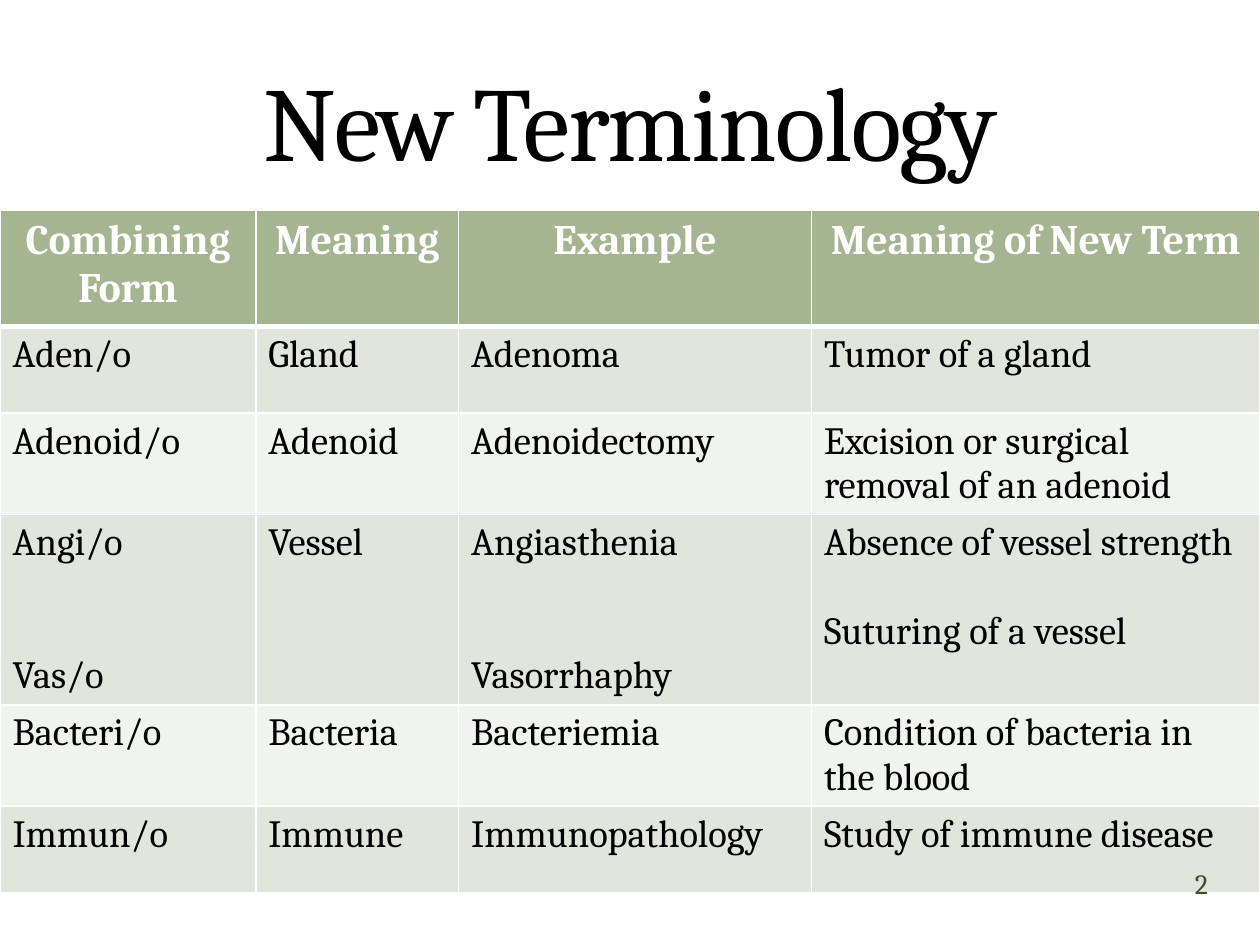
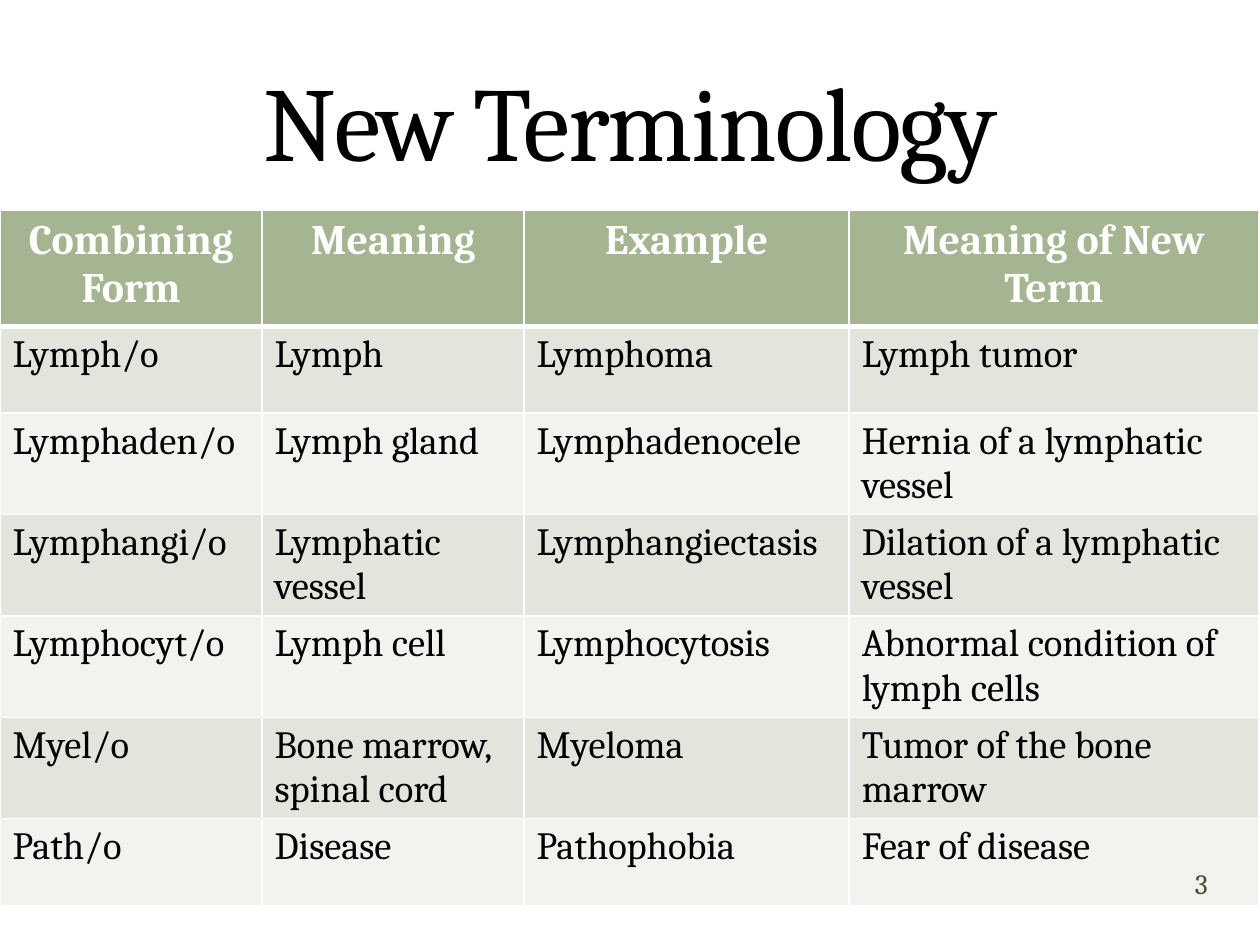
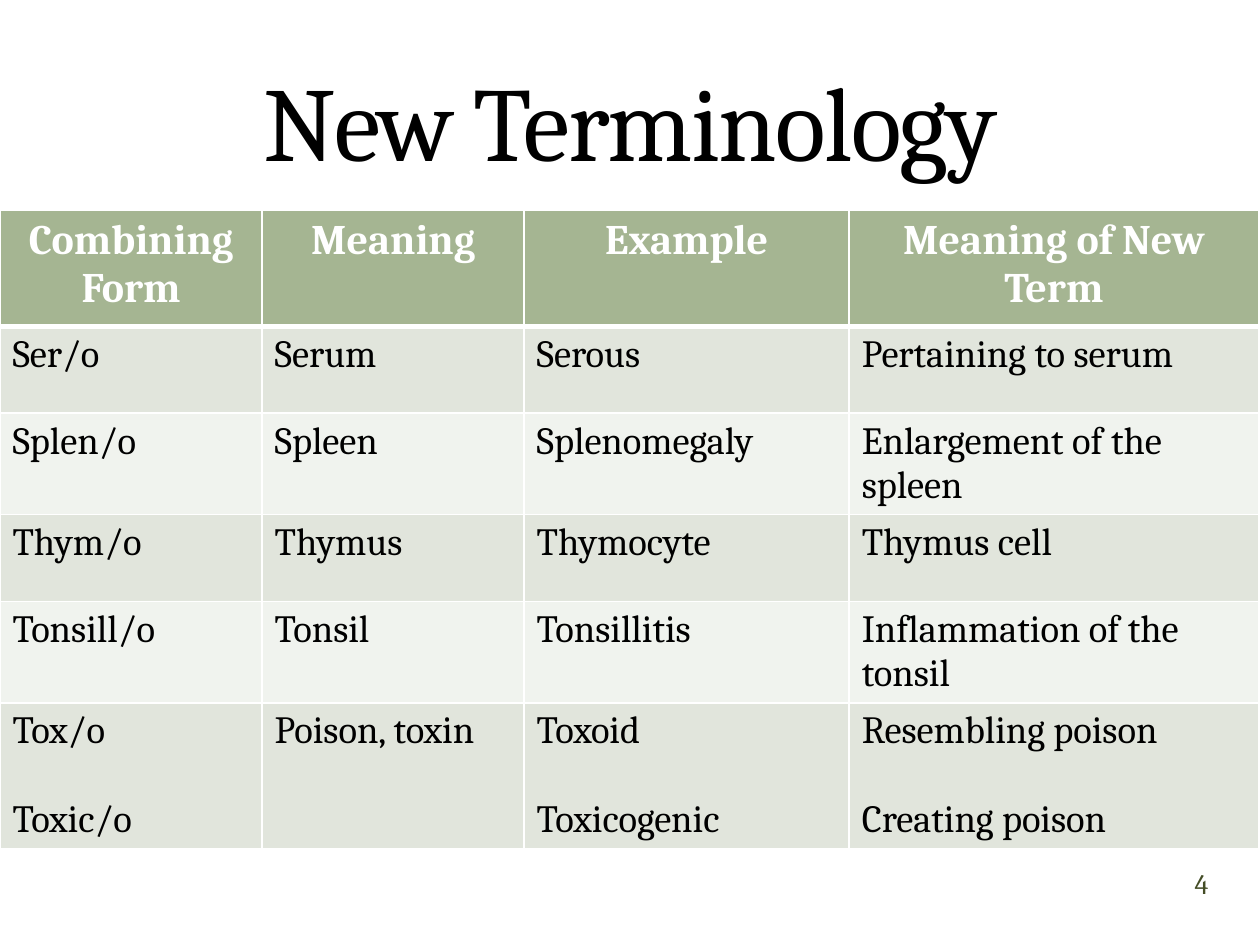
import pptx
import pptx.dml.color
import pptx.enum.text
import pptx.oxml
import pptx.oxml.ns
import pptx.util
from pptx.util import Inches, Pt

COLORS = {
    "white": "FFFFFF",
    "black": "000000",
    "header": "A5B592",
    "band_dark": "E1E5DC",
    "band_light": "F0F3EE",
    "number": "444D26",
    "title_outline": "E0DDB1",
}
FONT = "Cambria"
BODY_LINE = 25.4  # points from one body line to the next
HEADINGS = ["Combining Form", "Meaning", "Example", "Meaning of New Term"]
ALIGN = pptx.enum.text.PP_ALIGN
ANCHOR = pptx.enum.text.MSO_ANCHOR


def rgb(name):
    return pptx.dml.color.RGBColor.from_string(COLORS[name])


def parse_xml(tag, attributes, content):
    namespace = pptx.oxml.ns.nsdecls("a")
    return pptx.oxml.parse_xml(f"<a:{tag} {namespace} {attributes}>{content}</a:{tag}>")


def write(frame, text, size, color, bold=False, align=ALIGN.LEFT, gap=0):
    """Fill a text frame, one paragraph a line, with gap points between paragraphs."""
    frame.word_wrap = True
    for index, line in enumerate(text.split("\n")):
        para = frame.add_paragraph() if index else frame.paragraphs[0]
        para.alignment = align
        if index:
            para.space_before = Pt(gap)
        span = para.add_run()
        span.text = line
        span.font.name = FONT
        span.font.size = Pt(size)
        span.font.bold = bold
        span.font.color.rgb = rgb(color)


def set_borders(cell, top, bottom):
    """Draw white borders; top and bottom are widths in points."""
    widths = {"lnL": 1, "lnR": 1, "lnT": top, "lnB": bottom}
    properties = cell._tc.get_or_add_tcPr()
    fill = f'<a:solidFill><a:srgbClr val="{COLORS["white"]}"/></a:solidFill>'
    for index, (tag, width) in enumerate(widths.items()):
        properties.insert(index, parse_xml(tag, f'w="{Pt(width)}"', fill))


class TermDeck:
    def __init__(self):
        self.deck = pptx.Presentation()
        self.deck.slide_width = Inches(10)
        self.deck.slide_height = Inches(7.5)
        self.page = None

    def add_page(self):
        self.page = self.deck.slides.add_slide(self.deck.slide_layouts[5])

    def add_title(self, text):
        title = self.page.shapes.title
        title.left, title.top = Inches(0.5), Inches(0.17)
        title.width, title.height = Inches(9), Inches(1.33)
        frame = title.text_frame
        frame.auto_size = pptx.enum.text.MSO_AUTO_SIZE.NONE
        frame.vertical_anchor = ANCHOR.BOTTOM
        write(frame, text, 60, "black", align=ALIGN.CENTER)
        properties = frame.paragraphs[0].runs[0].font._element
        properties.set("spc", "-100")
        outline = (f'<a:solidFill><a:srgbClr val="{COLORS["title_outline"]}">'
                   '<a:alpha val="25000"/></a:srgbClr></a:solidFill>')
        properties.insert(0, parse_xml("ln", f'w="{Pt(0.25)}"', outline))

    def add_terms(self, widths, terms):
        """Add the table; a (first, blank lines, second) cell holds two spaced entries."""
        rows = [HEADINGS] + terms
        frame = self.page.shapes.add_table(
            len(rows), len(widths), 0, Inches(1.67), Inches(10),
            Inches(0.92 + 0.69 * len(terms)))
        table = frame.table
        table.first_row = table.horz_banding = False
        for column, width in zip(table.columns, widths):
            column.width = Inches(width)
        for row_index, entries in enumerate(rows):
            table.rows[row_index].height = Inches(0.69 if row_index else 0.92)
            for column_index, entry in enumerate(entries):
                self.fill_cell(table.cell(row_index, column_index), row_index, entry)

    def fill_cell(self, cell, row_index, entry):
        cell.fill.solid()
        if row_index == 0:
            cell.fill.fore_color.rgb = rgb("header")
            write(cell.text_frame, entry, 24, "white", bold=True, align=ALIGN.CENTER)
        else:
            cell.fill.fore_color.rgb = rgb("band_dark" if row_index % 2 else "band_light")
            first, blank_lines, *rest = (entry, 0) if isinstance(entry, str) else entry
            write(cell.text_frame, "\n".join([first, *rest]), 22, "black",
                  gap=blank_lines * BODY_LINE)
        set_borders(cell, top=3 if row_index == 1 else 1, bottom=1 if row_index else 3)

    def add_page_number(self, number):
        box = self.page.shapes.add_textbox(
            Inches(9.2), Inches(6.76), Inches(0.67), Inches(0.5))
        frame = box.text_frame
        frame.margin_left = frame.margin_right = frame.margin_top = frame.margin_bottom = 0
        frame.vertical_anchor = ANCHOR.MIDDLE
        write(frame, str(number), 16, "number", align=ALIGN.CENTER)


GLAND_TERMS = [
    ["Aden/o", "Gland", "Adenoma", "Tumor of a gland"],
    ["Adenoid/o", "Adenoid", "Adenoidectomy", "Excision or surgical removal of an adenoid"],
    [("Angi/o", 2, "Vas/o"), "Vessel", ("Angiasthenia", 2, "Vasorrhaphy"),
     ("Absence of vessel strength", 1, "Suturing of a vessel")],
    ["Bacteri/o", "Bacteria", "Bacteriemia", "Condition of bacteria in the blood"],
    ["Immun/o", "Immune", "Immunopathology", "Study of immune disease"],
]
LYMPH_TERMS = [
    ["Lymph/o", "Lymph", "Lymphoma", "Lymph tumor"],
    ["Lymphaden/o", "Lymph gland", "Lymphadenocele", "Hernia of a lymphatic vessel"],
    ["Lymphangi/o", "Lymphatic vessel", "Lymphangiectasis", "Dilation of a lymphatic vessel"],
    ["Lymphocyt/o", "Lymph cell", "Lymphocytosis", "Abnormal condition of lymph cells"],
    ["Myel/o", "Bone marrow, spinal cord", "Myeloma", "Tumor of the bone marrow"],
    ["Path/o", "Disease", "Pathophobia", "Fear of disease"],
]
SERUM_TERMS = [
    ["Ser/o", "Serum", "Serous", "Pertaining to serum"],
    ["Splen/o", "Spleen", "Splenomegaly", "Enlargement of the spleen"],
    ["Thym/o", "Thymus", "Thymocyte", "Thymus cell"],
    ["Tonsill/o", "Tonsil", "Tonsillitis", "Inflammation of the tonsil"],
    [("Tox/o", 1, "Toxic/o"), "Poison, toxin", ("Toxoid", 1, "Toxicogenic"),
     ("Resembling poison", 1, "Creating poison")],
]
WIDE_MEANING = [2.03, 1.61, 2.8, 3.56]
EVEN_START = [2.08, 2.08, 2.58, 3.25]


def main():
    terms = TermDeck()
    tables = [(WIDE_MEANING, GLAND_TERMS), (EVEN_START, LYMPH_TERMS), (EVEN_START, SERUM_TERMS)]
    for number, (widths, rows) in enumerate(tables, start=2):
        terms.add_page()
        terms.add_title("New Terminology")
        terms.add_terms(widths, rows)
        terms.add_page_number(number)
    terms.deck.save("out.pptx")


if __name__ == "__main__":
    main()
